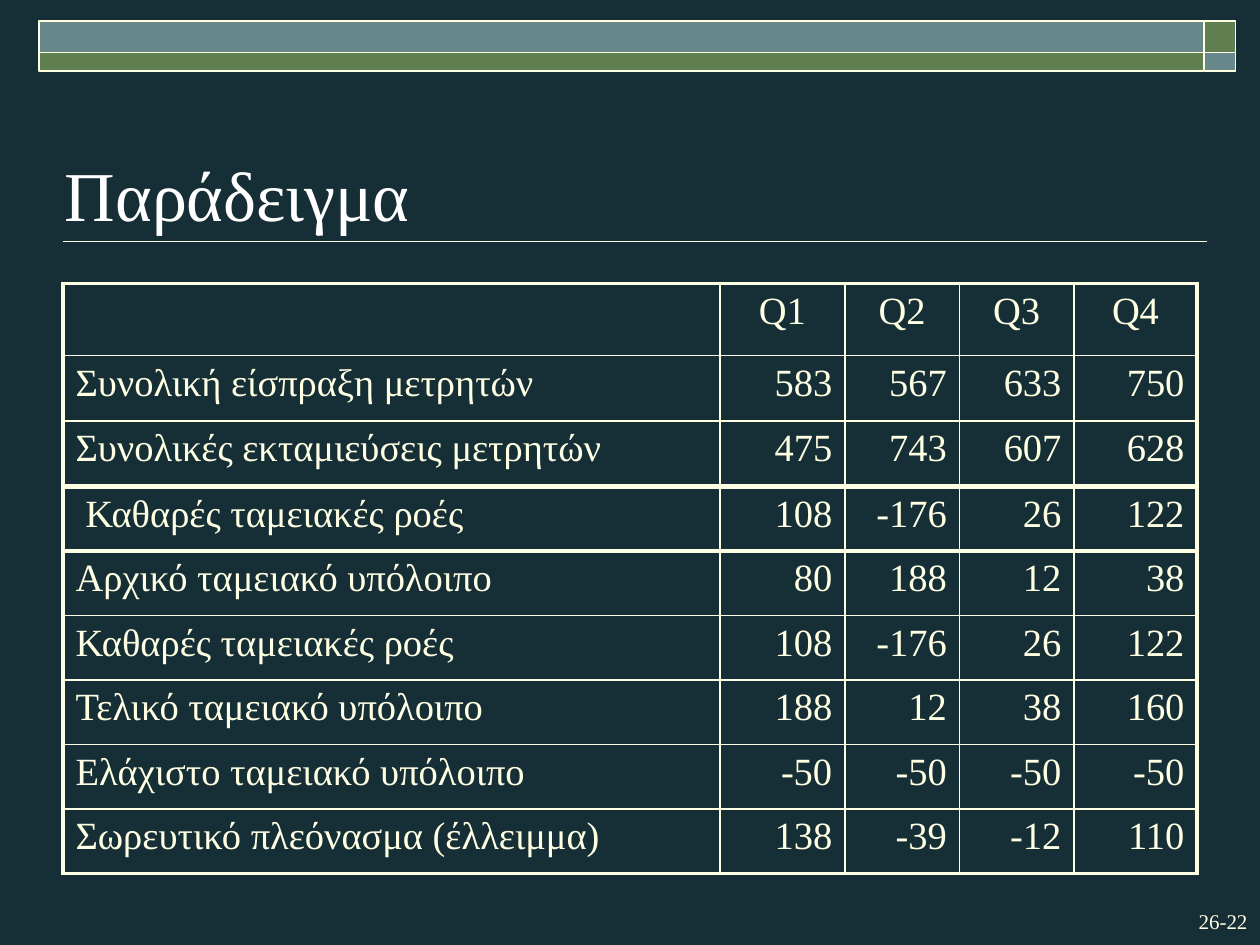
from dataclasses import dataclass
from itertools import product

from lxml.etree import SubElement
from pptx import Presentation
from pptx.dml.color import RGBColor
from pptx.enum.shapes import MSO_CONNECTOR, MSO_SHAPE
from pptx.enum.text import MSO_ANCHOR, PP_ALIGN
from pptx.oxml.ns import qn
from pptx.slide import Slide
from pptx.table import _Cell
from pptx.util import Cm, Pt

NIGHT = RGBColor(0x16, 0x2E, 0x36)
CREAM = RGBColor(0xFF, 0xFF, 0xE3)
WHITE = RGBColor(0xFF, 0xFF, 0xFF)
GREEN = RGBColor(0x61, 0x80, 0x52)
STEEL = RGBColor(0x69, 0x88, 0x8B)
FONT = "Times New Roman"

THIN, OUTER, HEAVY = 1, 2.25, 3
COLUMN_WIDTHS = (13.24, 2.52, 2.31, 2.31, 2.48)
ROW_HEIGHTS = (1.45, 1.32, 1.32) + (1.3,) * 6
NET_FLOW_ROW = 3
NET_FLOW_INDENT = 0.45
ROWS = (
    ("", "Q1", "Q2", "Q3", "Q4"),
    ("Συνολική είσπραξη μετρητών", "583", "567", "633", "750"),
    ("Συνολικές εκταμιεύσεις μετρητών", "475", "743", "607", "628"),
    ("Καθαρές ταμειακές ροές", "108", "-176", "26", "122"),
    ("Αρχικό ταμειακό υπόλοιπο", "80", "188", "12", "38"),
    ("Καθαρές ταμειακές ροές", "108", "-176", "26", "122"),
    ("Τελικό ταμειακό υπόλοιπο", "188", "12", "38", "160"),
    ("Ελάχιστο ταμειακό υπόλοιπο", "-50", "-50", "-50", "-50"),
    ("Σωρευτικό πλεόνασμα (έλλειμμα)", "138", "-39", "-12", "110"),
)


@dataclass(frozen=True)
class Span:
    start: float
    size: float


@dataclass(frozen=True)
class Label:
    text: str
    left: float
    top: float
    width: float
    height: float
    size: float
    color: RGBColor
    alignment: PP_ALIGN
    anchor: MSO_ANCHOR


BAND_COLUMNS = (Span(0.78, 23.5), Span(24.28, 0.63))
BAND_ROWS = (Span(0.43, 0.63), Span(1.06, 0.38))
LABELS = (
    Label("Παράδειγμα", 1.06, 2.34, 23.7, 2.54, 40, WHITE, PP_ALIGN.LEFT, MSO_ANCHOR.BOTTOM),
    Label("26-22", 23.29, 18.2, 2.11, 0.76, 12, CREAM, PP_ALIGN.RIGHT, MSO_ANCHOR.TOP),
)


def style_paragraph(paragraph, size: float, color: RGBColor, alignment: PP_ALIGN) -> None:
    paragraph.alignment = alignment
    paragraph.font.name = FONT
    paragraph.font.size = Pt(size)
    paragraph.font.color.rgb = color


def add_header_bands(slide: Slide) -> None:
    """Draw the two-by-two band grid, its colours alternating like a chessboard."""
    for (i, row), (j, column) in product(enumerate(BAND_ROWS), enumerate(BAND_COLUMNS)):
        band = slide.shapes.add_shape(
            MSO_SHAPE.RECTANGLE,
            Cm(column.start), Cm(row.start), Cm(column.size), Cm(row.size),
        )
        band.shadow.inherit = False
        band.fill.solid()
        band.fill.fore_color.rgb = (STEEL, GREEN)[(i + j) % 2]
        band.line.color.rgb = CREAM
        band.line.width = Pt(THIN)


def add_title_rule(slide: Slide) -> None:
    rule = slide.shapes.add_connector(
        MSO_CONNECTOR.STRAIGHT, Cm(24.33), Cm(4.87), Cm(1.27), Cm(4.87)
    )
    rule.line.color.rgb = CREAM
    rule.line.width = Pt(THIN)
    SubElement(rule._element.spPr, qn("a:effectLst"))


def add_label(slide: Slide, label: Label) -> None:
    box = slide.shapes.add_textbox(
        Cm(label.left), Cm(label.top), Cm(label.width), Cm(label.height)
    )
    frame = box.text_frame
    frame.word_wrap = True
    frame.vertical_anchor = label.anchor
    frame.text = label.text
    style_paragraph(frame.paragraphs[0], label.size, label.color, label.alignment)


def horizontal_width(edge: int) -> float:
    """Return the line width of the horizontal edge above row number edge."""
    if edge in (NET_FLOW_ROW, NET_FLOW_ROW + 1):
        return HEAVY
    return OUTER if edge in (0, len(ROWS)) else THIN


def vertical_width(row: int, edge: int) -> float:
    """Return the line width, within a row, of the edge left of column number edge."""
    if edge not in (0, len(COLUMN_WIDTHS)):
        return THIN
    return HEAVY if row == NET_FLOW_ROW else OUTER


def set_borders(cell: _Cell, row: int, column: int) -> None:
    widths = {
        "a:lnL": vertical_width(row, column),
        "a:lnR": vertical_width(row, column + 1),
        "a:lnT": horizontal_width(row),
        "a:lnB": horizontal_width(row + 1),
    }
    properties = cell._tc.get_or_add_tcPr()
    for tag, width in widths.items():
        border = SubElement(properties, qn(tag), w=str(Pt(width)))
        fill = SubElement(border, qn("a:solidFill"))
        SubElement(fill, qn("a:srgbClr"), val=str(CREAM))


def add_cash_table(slide: Slide) -> None:
    table = slide.shapes.add_table(
        len(ROWS), len(COLUMN_WIDTHS), Cm(1.27), Cm(5.72),
        Cm(sum(COLUMN_WIDTHS)), Cm(sum(ROW_HEIGHTS)),
    ).table
    table.first_row = False
    table.horz_banding = False
    for column, width in zip(table.columns, COLUMN_WIDTHS):
        column.width = Cm(width)
    for row, height in zip(table.rows, ROW_HEIGHTS):
        row.height = Cm(height)

    for i, values in enumerate(ROWS):
        for j, value in enumerate(values):
            cell = table.cell(i, j)
            set_borders(cell, i, j)
            cell.fill.background()
            cell.text = value
            if j == 0:
                alignment = PP_ALIGN.LEFT
            else:
                alignment = PP_ALIGN.CENTER if i == 0 else PP_ALIGN.RIGHT
            style_paragraph(cell.text_frame.paragraphs[0], 22, CREAM, alignment)
    table.cell(NET_FLOW_ROW, 0).margin_left = Cm(NET_FLOW_INDENT)


def main() -> None:
    presentation = Presentation()
    presentation.slide_width = Cm(25.4)
    presentation.slide_height = Cm(19.05)
    slide = presentation.slides.add_slide(presentation.slide_layouts[6])
    slide.background.fill.solid()
    slide.background.fill.fore_color.rgb = NIGHT

    add_title_rule(slide)
    add_header_bands(slide)
    for label in LABELS:
        add_label(slide, label)
    add_cash_table(slide)
    presentation.save("out.pptx")


if __name__ == "__main__":
    main()
